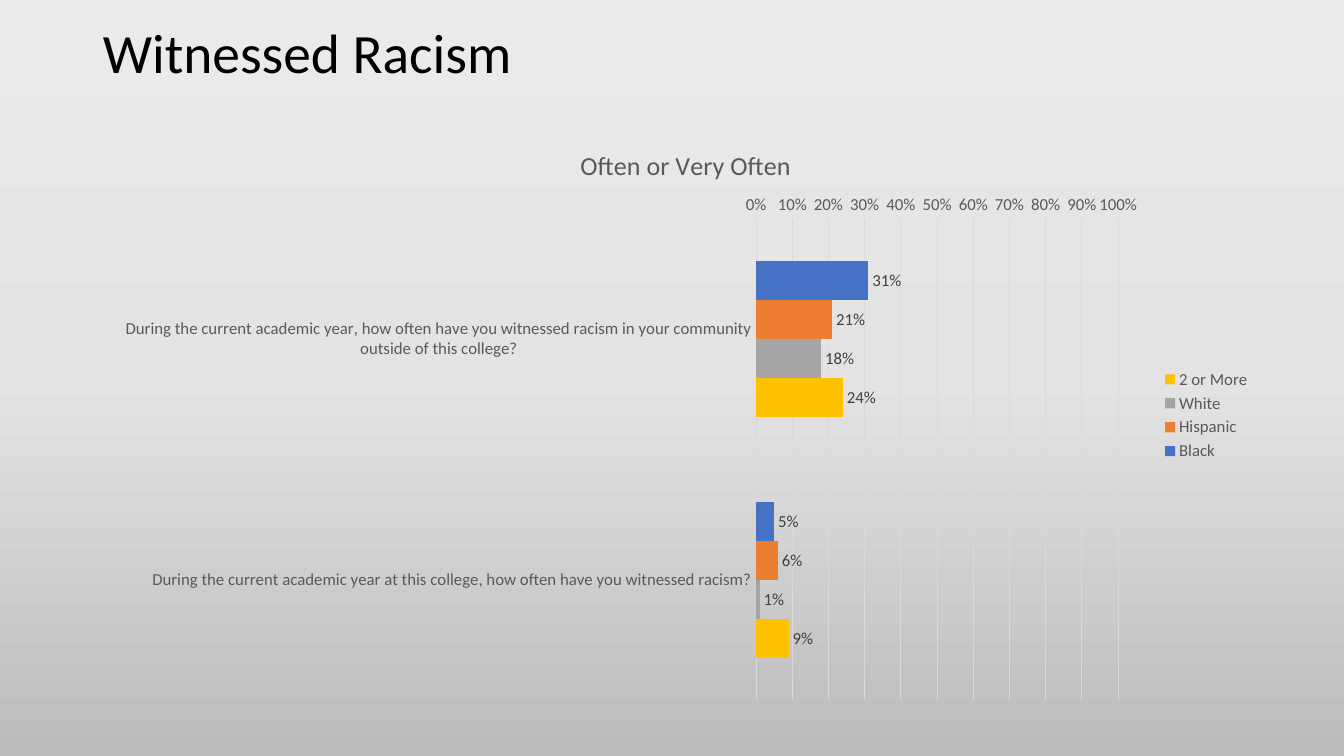
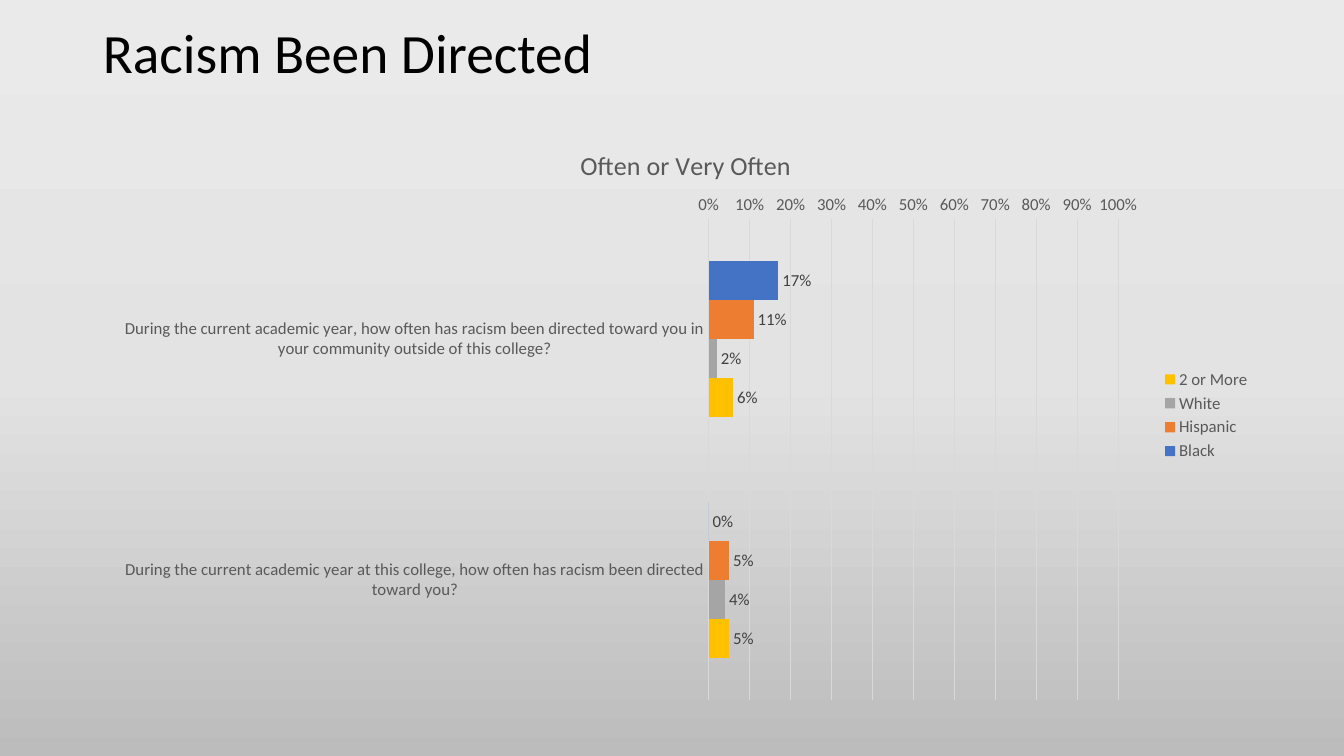
from copy import deepcopy

from lxml import etree
from pptx import Presentation
from pptx import util as u
from pptx.chart.data import CategoryChartData
from pptx.dml.color import RGBColor
from pptx.enum import chart as ch, text
from pptx.oxml.ns import qn

FACE = "Calibri"
INK, GREY, DARK, RULE = "000000", "595959", "404040", "D9D9D9"
BACK = [(0, "EBEAEA"), (0.5, "E4E3E3"), (1, "BDBCBC")]
GROUPS = {"Black": "4472C4", "Hispanic": "ED7D31",
          "White": "A5A5A5", "2 or More": "FFC000"}
TITLE = (0.92, 0.22, 11.5, 0.67)
CHART = (1.01, 1.16, 11.5, 5.92)
HEAD = (5.71, 1.41)
TOP, RIGHT, BOTTOM = 2.17, 11.09, 6.95

SLIDES = [
    ("Witnessed Racism", 7.5, [
        ("During the current academic year, how often have you witnessed "
         "racism in your community outside of this college?",
         (0.31, 0.21, 0.18, 0.24)),
        ("During the current academic year at this college, how often have "
         "you witnessed racism?",
         (0.05, 0.06, 0.01, 0.09)),
    ]),
    ("Racism Been Directed", 7.03, [
        ("During the current academic year, how often has racism been "
         "directed toward you in your community outside of this college?",
         (0.17, 0.11, 0.02, 0.06)),
        ("During the current academic year at this college, how often has "
         "racism been directed toward you?",
         (0, 0.05, 0.04, 0.05)),
    ]),
]


def color(code):
    return RGBColor.from_string(code)


def apply(item, **vals):
    for name, val in vals.items():
        setattr(item, name, val)


def style(font, size, code):
    apply(font, name=FACE, size=u.Pt(size), bold=False)
    font.color.rgb = color(code)


def line(form, code):
    form.line.color.rgb = color(code)
    form.line.width = u.Pt(0.75)


def pin(node, left, top, width=None, height=None):
    """Fix a chart part at a place given in inches on the slide."""
    lay = node.find(qn("c:layout"))
    if lay is None:
        lay = etree.Element(qn("c:layout"))
        node.insert(0, lay)
    box = etree.SubElement(lay, qn("c:manualLayout"))
    vals = {"xMode": "edge", "yMode": "edge",
            "x": (left - CHART[0]) / CHART[2],
            "y": (top - CHART[1]) / CHART[3]}
    if width:
        vals = {"layoutTarget": "inner", **vals,
                "w": width / CHART[2], "h": height / CHART[3]}
    for name, val in vals.items():
        etree.SubElement(box, qn("c:" + name)).set("val", str(val))


class Deck:
    def __init__(self):
        self.prs = Presentation()
        apply(self.prs, slide_width=u.Inches(13.33),
              slide_height=u.Inches(7.5))
        self.slide = None
        self.back()

    def back(self):
        fill = self.prs.slide_master.background.fill
        fill.gradient()
        fill.gradient_angle = 270
        stops = fill._fill._gradFill.find(qn("a:gsLst"))
        stops.insert(1, deepcopy(stops[0]))
        for stop, (pos, code) in zip(fill.gradient_stops, BACK):
            stop.position = pos
            stop.color.rgb = color(code)

    def title(self, words):
        self.slide = self.prs.slides.add_slide(self.prs.slide_layouts[5])
        shape = self.slide.shapes.title
        for name, val in zip(("left", "top", "width", "height"), TITLE):
            setattr(shape, name, u.Inches(val))
        frame = shape.text_frame
        frame.text = words
        apply(frame, vertical_anchor=text.MSO_ANCHOR.MIDDLE, word_wrap=True)
        para = frame.paragraphs[0]
        apply(para, alignment=text.PP_ALIGN.LEFT, line_spacing=0.9)
        style(para.runs[0].font, 39.6, INK)

    def chart(self, head, left, rows):
        data = CategoryChartData(number_format="0%")
        data.categories = [row[0] for row in rows]
        for name, vals in zip(GROUPS, zip(*(row[1] for row in rows))):
            data.add_series(name, vals)
        chart = self.slide.shapes.add_chart(
            ch.XL_CHART_TYPE.BAR_CLUSTERED, *map(u.Inches, CHART), data).chart
        style(chart.font, 10, INK)
        frame = chart.chart_title.text_frame
        frame.text = head
        style(frame.paragraphs[0].runs[0].font, 18.6, GREY)
        pin(chart.chart_title.element, *HEAD)
        pin(chart.element.find(".//" + qn("c:plotArea")),
            left, TOP, RIGHT - left, BOTTOM - TOP)
        self.axes(chart)
        self.bars(chart.plots[0])
        chart.has_legend = True
        apply(chart.legend, position=ch.XL_LEGEND_POSITION.RIGHT,
              include_in_layout=False)
        style(chart.legend.font, 12, GREY)

    def axes(self, chart):
        cat, val = chart.category_axis, chart.value_axis
        for axis in (cat, val):
            apply(axis, major_tick_mark=ch.XL_TICK_MARK.NONE,
                  minor_tick_mark=ch.XL_TICK_MARK.NONE)
            style(axis.tick_labels.font, 12, GREY)
        cat.reverse_order = True
        line(cat.format, RULE)
        apply(val, minimum_scale=0, maximum_scale=1, major_unit=0.1,
              has_major_gridlines=True)
        line(val.major_gridlines.format, RULE)
        val.format.line.fill.background()
        apply(val.tick_labels, number_format="0%",
              number_format_is_linked=False)

    def bars(self, plot):
        apply(plot, gap_width=219, overlap=0, vary_by_categories=False)
        for bar, code in zip(plot.series, GROUPS.values()):
            bar.format.fill.solid()
            bar.format.fill.fore_color.rgb = color(code)
            tags = bar.data_labels
            apply(tags, show_value=True, number_format="0%",
                  number_format_is_linked=False,
                  position=ch.XL_LABEL_POSITION.OUTSIDE_END)
            style(tags.font, 12, DARK)


def main():
    deck = Deck()
    for words, left, rows in SLIDES:
        deck.title(words)
        deck.chart("Often or Very Often", left, rows)
    deck.prs.save("out.pptx")


if __name__ == "__main__":
    main()
